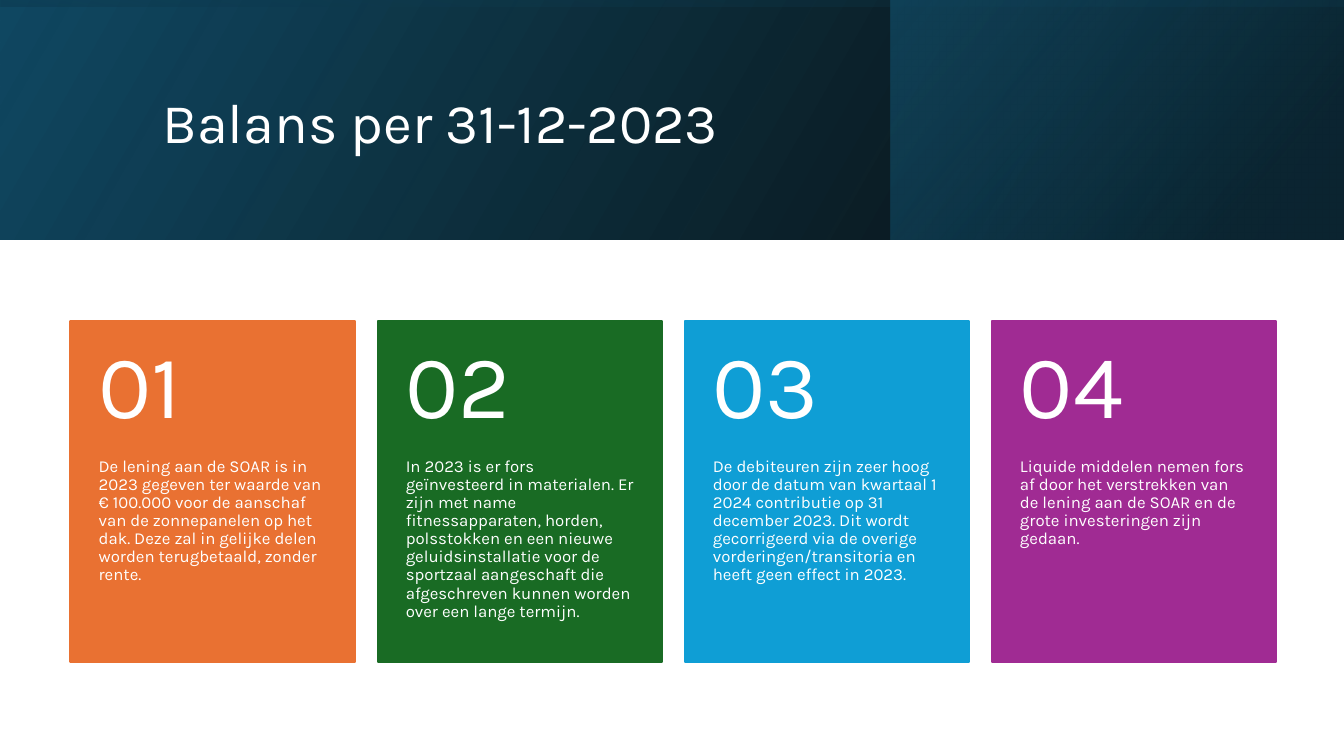
"""Builds the balance sheet slide with a gradient header and four numbered cards."""
from lxml import etree
from pptx import Presentation
from pptx.dml.color import RGBColor
from pptx.enum import shapes, text
from pptx.oxml.ns import qn
from pptx.util import Pt

FONT = "Karla"
WHITE = "FFFFFF"
PAGE_WIDTH, PAGE_HEIGHT = 960, 540
HEADER_HEIGHT = 170.8
CARDS = [
    ("E97132", "De lening aan de SOAR is in 2023 gegeven ter waarde van € 100.000 voor "
     "de aanschaf van de zonnepanelen op het dak. Deze zal in gelijke delen worden "
     "terugbetaald, zonder rente."),
    ("196B24", "In 2023 is er fors geïnvesteerd in materialen. Er zijn met name "
     "fitnessapparaten, horden, polsstokken en een nieuwe geluidsinstallatie voor de "
     "sportzaal aangeschaft die afgeschreven kunnen worden over een lange termijn."),
    ("0F9ED5", "De debiteuren zijn zeer hoog door de datum van kwartaal 1 2024 "
     "contributie op 31 december 2023. Dit wordt gecorrigeerd via de overige "
     "vorderingen/transitoria en heeft geen effect in 2023."),
    ("A02B93", "Liquide middelen nemen fors af door het verstrekken van de lening aan "
     "de SOAR en de grote investeringen zijn gedaan."),
]


def color(value):
    """Turn a hex string into a colour."""
    return RGBColor.from_string(value)


def add_rectangle(page, left, top, width, height):
    """Add a rectangle without shadow."""
    box = page.shapes.add_shape(shapes.MSO_SHAPE.RECTANGLE,
                                Pt(left), Pt(top), Pt(width), Pt(height))
    box.shadow.inherit = False
    return box


def fill_gradient(box, angle, stops):
    """Fill a box with a linear gradient of (position, colour, opacity) stops."""
    gradient = etree.Element(qn("a:gradFill"), rotWithShape="1")
    stop_list = etree.SubElement(gradient, qn("a:gsLst"))
    for position, value, opacity in stops:
        stop = etree.SubElement(stop_list, qn("a:gs"), pos=str(position * 1000))
        shade = etree.SubElement(stop, qn("a:srgbClr"), val=value)
        etree.SubElement(shade, qn("a:alpha"), val=str(opacity * 1000))
    etree.SubElement(gradient, qn("a:lin"), ang=str(angle * 60000), scaled="0")
    box.element.spPr.find(qn("a:prstGeom")).addnext(gradient)


def add_band(page, left, top, width, height, angle, stops, rotation=0):
    """Add one mirrored gradient layer of the header."""
    band = add_rectangle(page, left, top, width, height)
    band.element.spPr.find(qn("a:xfrm")).set("flipH", "1")
    band.rotation = rotation
    band.line.fill.background()
    fill_gradient(band, angle, stops)


def write(frame, words, size, anchor, margins):
    """Write one white paragraph into a text frame."""
    frame.word_wrap = True
    frame.auto_size = text.MSO_AUTO_SIZE.NONE
    frame.vertical_anchor = anchor
    frame.margin_left = frame.margin_right = Pt(margins[0])
    frame.margin_top, frame.margin_bottom = Pt(margins[1]), Pt(margins[2])
    frame.text = words
    para = frame.paragraphs[0]
    para.alignment = text.PP_ALIGN.LEFT
    para.line_spacing = 0.9
    span = para.runs[0]
    span.font.name, span.font.size = FONT, Pt(size)
    span.font.color.rgb = color(WHITE)


def add_header(page, width, height):
    """Layer the gradients across the top and place the title over them."""
    panel_left = 636.5
    add_band(page, 0, 0, width, height, 330,
             [(0, "000000", 96), (100, "104862", 100)])
    add_band(page, panel_left, 0, width - panel_left - 0.7, height, 320,
             [(19, "0B3041", 68), (100, "156082", 48)])
    add_band(page, (width - height) / 2, (height - width) / 2, height, width, 350,
             [(23, "104862", 16), (99, "000000", 45)], rotation=270)
    title = page.shapes.title
    title.left, title.top, title.width, title.height = (
        Pt(108.7), Pt(27.4), Pt(765.4), Pt(123.8))
    write(title.text_frame, "Balans per 31-12-2023", 40,
          text.MSO_ANCHOR.MIDDLE, (7.2, 3.6, 3.6))
    title.element.getparent().append(title.element)


def add_card(page, left, top, width, height, number, fill, words):
    """Add a coloured card with its number above its explanation."""
    card = add_rectangle(page, left, top, width, height)
    card.fill.solid()
    card.fill.fore_color.rgb = card.line.color.rgb = color(fill)
    card.line.width = Pt(1.5)
    number_height = height * 0.4
    body = page.shapes.add_textbox(Pt(left), Pt(top + number_height),
                                   Pt(width), Pt(height - number_height))
    write(body.text_frame, words, 12, text.MSO_ANCHOR.TOP, (20.1, 0, 26))
    heading = page.shapes.add_textbox(Pt(left), Pt(top), Pt(width), Pt(number_height))
    write(heading.text_frame, f"{number:02}", 64, text.MSO_ANCHOR.MIDDLE, (20.1, 13, 13))


def add_cards(page, left, top, width, height):
    """Spread the cards evenly over a box."""
    gap = 16.24
    card_width = (width - gap * (len(CARDS) - 1)) / len(CARDS)
    for index, (fill, words) in enumerate(CARDS):
        add_card(page, left + index * (card_width + gap), top, card_width, height,
                 index + 1, fill, words)


def main():
    """Build and save the deck."""
    deck = Presentation()
    deck.slide_width, deck.slide_height = Pt(PAGE_WIDTH), Pt(PAGE_HEIGHT)
    page = deck.slides.add_slide(deck.slide_layouts[5])
    page.background.fill.solid()
    page.background.fill.fore_color.rgb = color(WHITE)
    add_header(page, PAGE_WIDTH, HEADER_HEIGHT)
    add_cards(page, 50.4, 229.5, 861.2, 243.5)
    deck.save("out.pptx")


if __name__ == "__main__":
    main()
